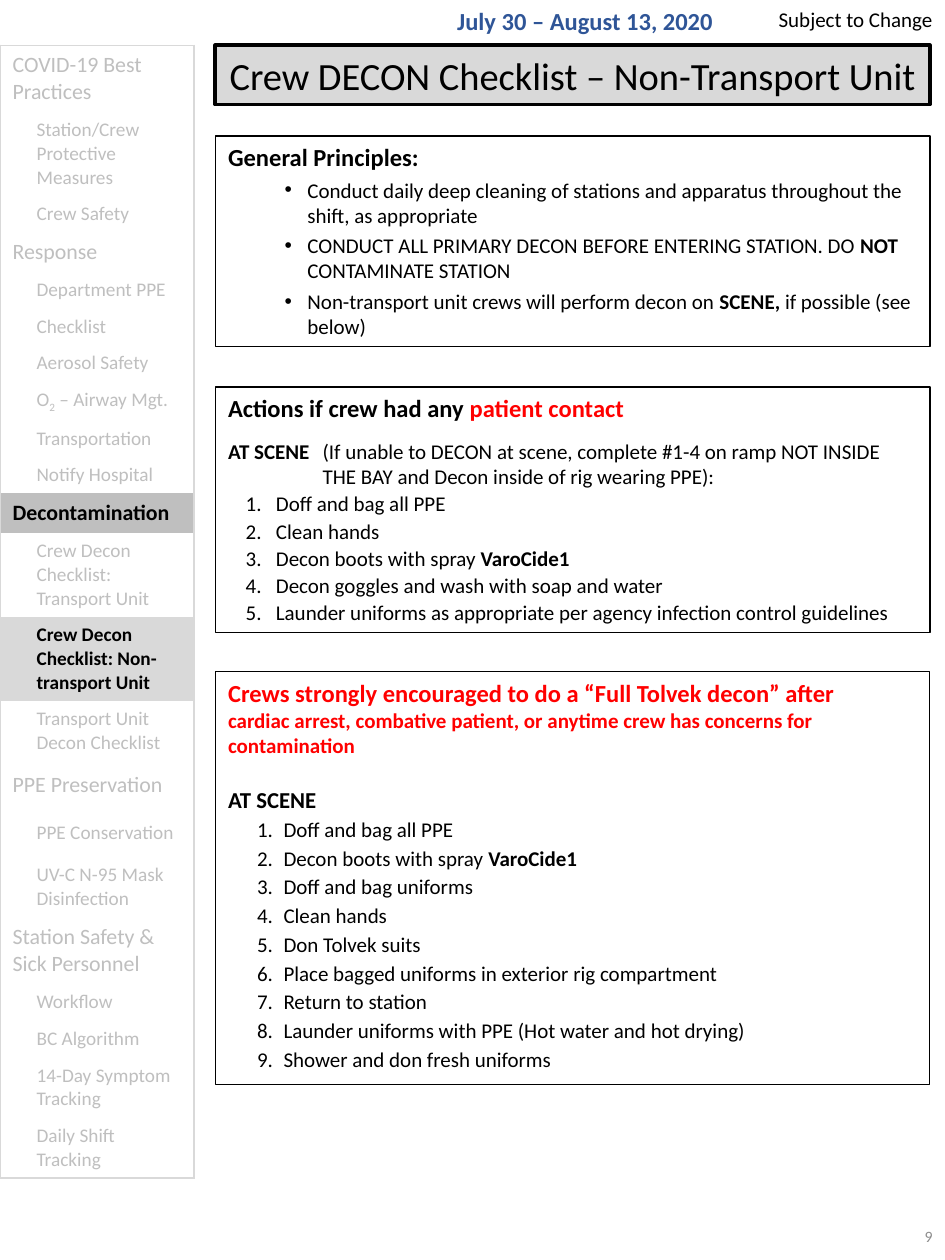
from pptx import Presentation
from pptx.dml.color import RGBColor
from pptx.enum.text import MSO_ANCHOR, MSO_AUTO_SIZE, PP_ALIGN
from pptx.oxml.xmlchemy import OxmlElement
from pptx.util import Inches, Pt

TOP, MIDDLE = MSO_ANCHOR.TOP, MSO_ANCHOR.MIDDLE
LEFT, CENTER, RIGHT = PP_ALIGN.LEFT, PP_ALIGN.CENTER, PP_ALIGN.RIGHT
FIXED = MSO_AUTO_SIZE.NONE
FONT = "Calibri"
BLACK, RED, BLUE = "000000", "FF0000", "2F5597"
PALE, GREY, DIM = "D9D9D9", "BFBFBF", "8C8C8C"
COMPARISON = 4
BODY_X, BODY_W = 1.71, 5.67

# Menu rows: height, level, runs
MENU = [
    (0.53, 0, ["COVID-19 Best Practices"]),
    (0.66, 1, ["Station/Crew Protective Measures"]),
    (0.29, 1, ["Crew Safety"]),
    (0.31, 0, ["Response"]),
    (0.29, 1, ["Department PPE"]),
    (0.29, 1, ["Checklist"]),
    (0.29, 1, ["Aerosol Safety"]),
    (0.29, 1, ["O", ("sub", "2"), " – Airway Mgt."]),
    (0.29, 1, ["Transportation"]),
    (0.29, 1, ["Notify Hospital"]),
    (0.31, 0, ["Decontamination"]),
    (0.66, 1, ["Crew Decon Checklist: Transport Unit"]),
    (0.66, 1, ["Crew Decon Checklist: Non-transport Unit"]),
    (0.48, 1, ["Transport Unit Decon Checklist"]),
    (0.38, 0, ["PPE Preservation"]),
    (0.38, 1, ["PPE Conservation"]),
    (0.48, 1, ["UV-C N-95 Mask Disinfection"]),
    (0.53, 0, ["Station Safety & Sick Personnel"]),
    (0.29, 1, ["Workflow"]),
    (0.29, 1, ["BC Algorithm"]),
    (0.48, 1, ["14-Day Symptom Tracking"]),
    (0.48, 1, ["Daily Shift Tracking"]),
]
ACTIVE = {10: GREY, 12: PALE}

PRINCIPLES = [
    ["Conduct daily deep cleaning of stations and apparatus throughout "
     "the shift, as appropriate"],
    ["CONDUCT ALL PRIMARY DECON BEFORE ENTERING STATION. DO ",
     ("bold", "NOT"), " CONTAMINATE STATION"],
    ["Non-transport unit crews will perform decon on ",
     ("bold", "SCENE, "), "if possible (see below)"],
]
SPRAY = ["Decon boots with spray ", ("bold", "VaroCide1")]
CONTACT = [
    ["Doff and bag all PPE"],
    ["Clean hands"],
    SPRAY,
    ["Decon goggles and wash with soap and water"],
    ["Launder uniforms as appropriate per agency infection control guidelines"],
]
FULL = [
    ["Doff and bag all PPE"],
    SPRAY,
    ["Doff and bag uniforms"],
    ["Clean hands"],
    ["Don Tolvek suits"],
    ["Place bagged uniforms in exterior rig compartment"],
    ["Return to station"],
    ["Launder uniforms with PPE (Hot water and hot drying)"],
    ["Shower and don fresh uniforms"],
]


def rgb(code):
    return RGBColor.from_string(code)


def mark(para, kind, indent, hang):
    """Set the indents and the bullet: "buNone", "buChar" or "buAutoNum"."""
    props = para._p.get_or_add_pPr()
    props.set("marL", str(Inches(indent)))
    props.set("indent", str(-Inches(hang)))
    bullet = OxmlElement("a:" + kind)
    if kind == "buChar":
        bullet.set("char", "•")
    elif kind == "buAutoNum":
        bullet.set("type", "arabicPeriod")
    props.append(bullet)


def border(cell, side, shown):
    line = OxmlElement("a:ln" + side)
    line.set("w", str(Pt(1)))
    fill = OxmlElement("a:solidFill" if shown else "a:noFill")
    if shown:
        color = OxmlElement("a:srgbClr")
        color.set("val", PALE)
        fill.append(color)
    line.append(fill)
    cell._tc.get_or_add_tcPr().append(line)


class Page:
    def __init__(self, slide):
        self.slide = slide

    def place(self, shape, x, y, w, h, anchor=TOP):
        shape.left, shape.top = Inches(x), Inches(y)
        shape.width, shape.height = Inches(w), Inches(h)
        frame = shape.text_frame
        frame.word_wrap, frame.auto_size = True, FIXED
        frame.vertical_anchor = anchor
        return frame

    def line(self, frame, runs, size, color=BLACK, bold=False, align=LEFT,
             before=0, kind="buNone", indent=0, hang=0):
        """Fill the first paragraph if it is free, else add one."""
        para = frame.paragraphs[0]
        if para.runs:
            para = frame.add_paragraph()
        mark(para, kind, indent, hang)
        para.alignment, para.space_before = align, Pt(before)
        font = para.font
        font.name, font.size, font.bold = FONT, Pt(size), bold
        font.color.rgb = rgb(color)
        for item in runs:
            style, text = ("", item) if isinstance(item, str) else item
            run = para.add_run()
            run.text = text
            if style == "bold":
                run.font.bold = True
            elif style == "red":
                run.font.color.rgb = rgb(RED)
            elif style == "sub":
                run._r.get_or_add_rPr().set("baseline", "-25000")

    def items(self, frame, rows, **style):
        for runs in rows:
            self.line(frame, runs, 12, **style)

    def label(self, text, x, y, w, h, size, anchor=TOP, **style):
        shape = self.slide.shapes.add_textbox(0, 0, 0, 0)
        frame = self.place(shape, x, y, w, h, anchor)
        self.line(frame, [text], size, **style)

    def title(self, text):
        shape = self.slide.shapes.title
        frame = self.place(shape, BODY_X, 0.36, BODY_W, 0.47, MIDDLE)
        shape.fill.solid()
        shape.fill.fore_color.rgb = rgb(PALE)
        shape.line.color.rgb, shape.line.width = rgb(BLACK), Pt(2.25)
        self.line(frame, [text], 22, align=CENTER)

    def panel(self, index, y, h, width=1):
        shape = self.slide.placeholders[index]
        shape.line.color.rgb, shape.line.width = rgb(BLACK), Pt(width)
        return self.place(shape, BODY_X, y, BODY_W, h)

    def menu(self):
        count = len(MENU)
        height = sum(row[0] for row in MENU)
        table = self.slide.shapes.add_table(
            count, 1, 0, Inches(0.36), Inches(1.54), Inches(height)).table
        table.first_row = table.horz_banding = False
        for i, (tall, level, runs) in enumerate(MENU):
            table.rows[i].height = Inches(tall)
            cell = table.cell(i, 0)
            cell.vertical_anchor = MIDDLE
            sides = {"L": True, "R": True, "T": i == 0, "B": i == count - 1}
            for side, shown in sides.items():
                border(cell, side, shown)
            active = i in ACTIVE
            if active:
                cell.fill.solid()
                cell.fill.fore_color.rgb = rgb(ACTIVE[i])
            else:
                cell.fill.background()
            self.line(cell.text_frame, runs, 11 if level else 12.5,
                      BLACK if active else GREY, active, indent=0.19 * level)


def main():
    deck = Presentation()
    deck.slide_width, deck.slide_height = Inches(7.5), Inches(10)
    slide = deck.slides.add_slide(deck.slide_layouts[COMPARISON])
    spare = slide.placeholders[4].element
    spare.getparent().remove(spare)
    page = Page(slide)

    page.label("July 30 – August 13, 2020", 3.53, 0, 2.28, 0.57, 14,
               color=BLUE, bold=True)
    page.label("Subject to Change", 5.81, 0, 1.69, 0.3, 12, align=RIGHT)
    page.label("9", 5.81, 9.55, 1.69, 0.53, 9, MIDDLE, color=DIM, align=RIGHT)
    page.menu()
    page.title("Crew DECON Checklist – Non-Transport Unit")

    frame = page.panel(1, 1.08, 1.67)
    page.line(frame, ["General Principles:"], 14, bold=True)
    page.items(frame, PRINCIPLES, before=3, kind="buChar",
               indent=0.63, hang=0.18)

    frame = page.panel(2, 3.07, 1.95)
    page.line(frame, ["Actions if crew had any ", ("red", "patient contact")],
              14, bold=True)
    page.line(frame, [("bold", "AT SCENE"),
                      "\t(If unable to DECON at scene, complete #1-4 on ramp "
                      "NOT INSIDE THE BAY and Decon inside of rig wearing PPE):"],
              12, before=9, indent=0.75, hang=0.75)
    page.items(frame, CONTACT, before=1.2, kind="buAutoNum",
               indent=0.38, hang=0.24)

    frame = page.panel(3, 5.33, 3.28, 0.75)
    page.line(frame, ["Crews strongly encouraged to do a “Full Tolvek decon” after"],
              14, RED, True)
    page.line(frame, ["cardiac arrest, combative patient, or anytime crew has "
                      "concerns for contamination"], 12, RED, True)
    page.line(frame, ["AT SCENE"], 13, bold=True, before=16)
    page.items(frame, FULL, before=2, kind="buAutoNum", indent=0.44, hang=0.21)

    deck.save("out.pptx")


if __name__ == "__main__":
    main()
